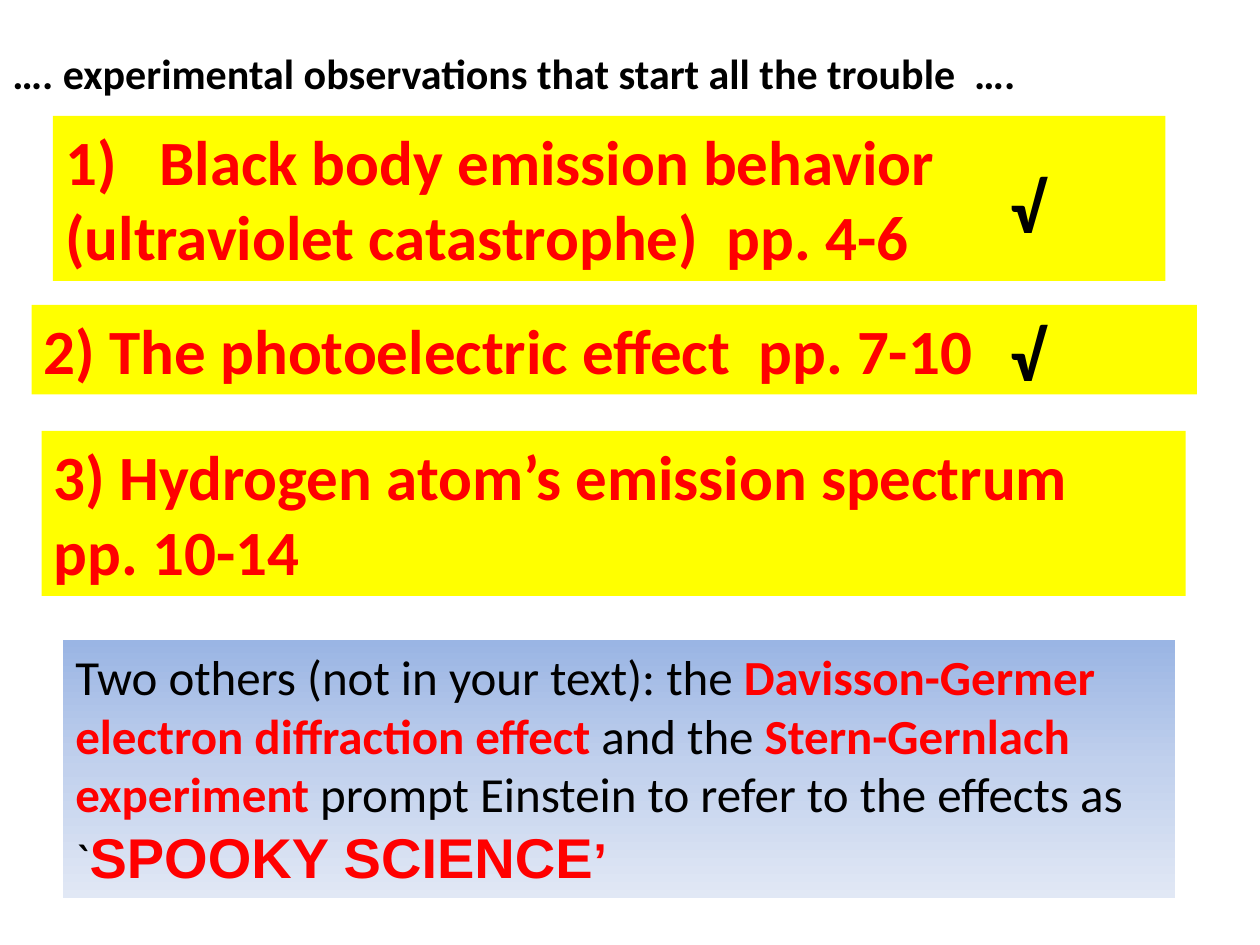
from copy import deepcopy

from pptx import Presentation
from pptx.dml.color import RGBColor
from pptx.enum.shapes import MSO_SHAPE
from pptx.enum.text import MSO_ANCHOR, MSO_AUTO_SIZE, PP_ALIGN
from pptx.util import Inches, Pt

RECTANGLE = MSO_SHAPE.RECTANGLE
TOP = MSO_ANCHOR.TOP
GROW = MSO_AUTO_SIZE.SHAPE_TO_FIT_TEXT
LEFT = PP_ALIGN.LEFT

BLACK = RGBColor(0x00, 0x00, 0x00)
RED = RGBColor(0xFF, 0x00, 0x00)
YELLOW = RGBColor(0xFF, 0xFF, 0x00)
BLUE_STOPS = (
    (0, RGBColor(0x9A, 0xB5, 0xE4)),
    (0.5, RGBColor(0xC2, 0xD1, 0xED)),
    (1, RGBColor(0xE1, 0xE8, 0xF5)),
)


class SlideBuilder:
    font = "Calibri"

    def __init__(self, slide):
        self.slide = slide

    def format_run(self, run, size, color, bold=True, font=None):
        run.font.name = font or self.font
        run.font.size = Pt(size)
        run.font.bold = bold
        run.font.color.rgb = color

    def prepare_frame(self, shape):
        frame = shape.text_frame
        frame.word_wrap = True
        frame.auto_size = GROW
        frame.vertical_anchor = TOP
        return frame

    def set_lines(self, shape, lines, size, color):
        frame = self.prepare_frame(shape)
        frame.text = "\n".join(lines)
        for paragraph in frame.paragraphs:
            paragraph.alignment = LEFT
            for run in paragraph.runs:
                self.format_run(run, size, color)

    def label(self, box, text, size):
        shape = self.slide.shapes.add_textbox(*map(Inches, box))
        self.set_lines(shape, [text], size, BLACK)

    def panel(self, box):
        shape = self.slide.shapes.add_shape(RECTANGLE, *map(Inches, box))
        shape.shadow.inherit = False
        shape.line.fill.background()
        return shape

    def topic(self, box, lines):
        shape = self.panel(box)
        shape.fill.solid()
        shape.fill.fore_color.rgb = YELLOW
        self.set_lines(shape, lines, 36, RED)

    def gradient_note(self, box, pieces):
        shape = self.panel(box)
        fill = shape.fill
        fill.gradient()
        fill.gradient_angle = 270
        stop_list = shape._element.spPr.gradFill.gsLst
        stop_list.insert(1, deepcopy(stop_list[0]))
        for stop, (position, color) in zip(fill.gradient_stops, BLUE_STOPS):
            stop.position = position
            stop.color.rgb = color
        paragraph = self.prepare_frame(shape).paragraphs[0]
        paragraph.alignment = LEFT
        for text, *style in pieces:
            run = paragraph.add_run()
            run.text = text
            self.format_run(run, *style)


def main():
    presentation = Presentation()
    presentation.slide_width = Inches(10)
    presentation.slide_height = Inches(7.5)
    builder = SlideBuilder(presentation.slides.add_slide(presentation.slide_layouts[6]))

    builder.topic(
        (0.42, 0.92, 8.83, 1.31),
        ["1)   Black body emission behavior (ultraviolet catastrophe)  pp. 4-6"],
    )
    builder.topic((0.25, 2.42, 9.25, 0.71), ["2) The photoelectric effect  pp. 7-10"])
    builder.topic(
        (0.33, 3.42, 9.08, 1.31),
        ["3) Hydrogen atom’s emission spectrum", "pp. 10-14"],
    )
    builder.gradient_note(
        (0.5, 5.08, 8.83, 2.05),
        [
            ("Two others (not in your text): the ", 28, BLACK, False),
            ("Davisson-Germer electron diffraction effect ", 28, RED),
            ("and the ", 28, BLACK, False),
            ("Stern-Gernlach experiment", 28, RED),
            (" prompt Einstein to refer to the effects as `", 28, BLACK, False),
            ("SPOOKY SCIENCE", 32, RED, True, "Arial"),
            ("’", 28, RED, True, "Arial"),
        ],
    )
    for check_top in (1.25, 2.42):
        builder.label((7.92, check_top, 0.75, 0.77), "√", 40)
    builder.label(
        (0, 0.33, 8.67, 0.5),
        "…. experimental observations that start all the trouble  ….",
        24,
    )
    presentation.save("out.pptx")


if __name__ == "__main__":
    main()
